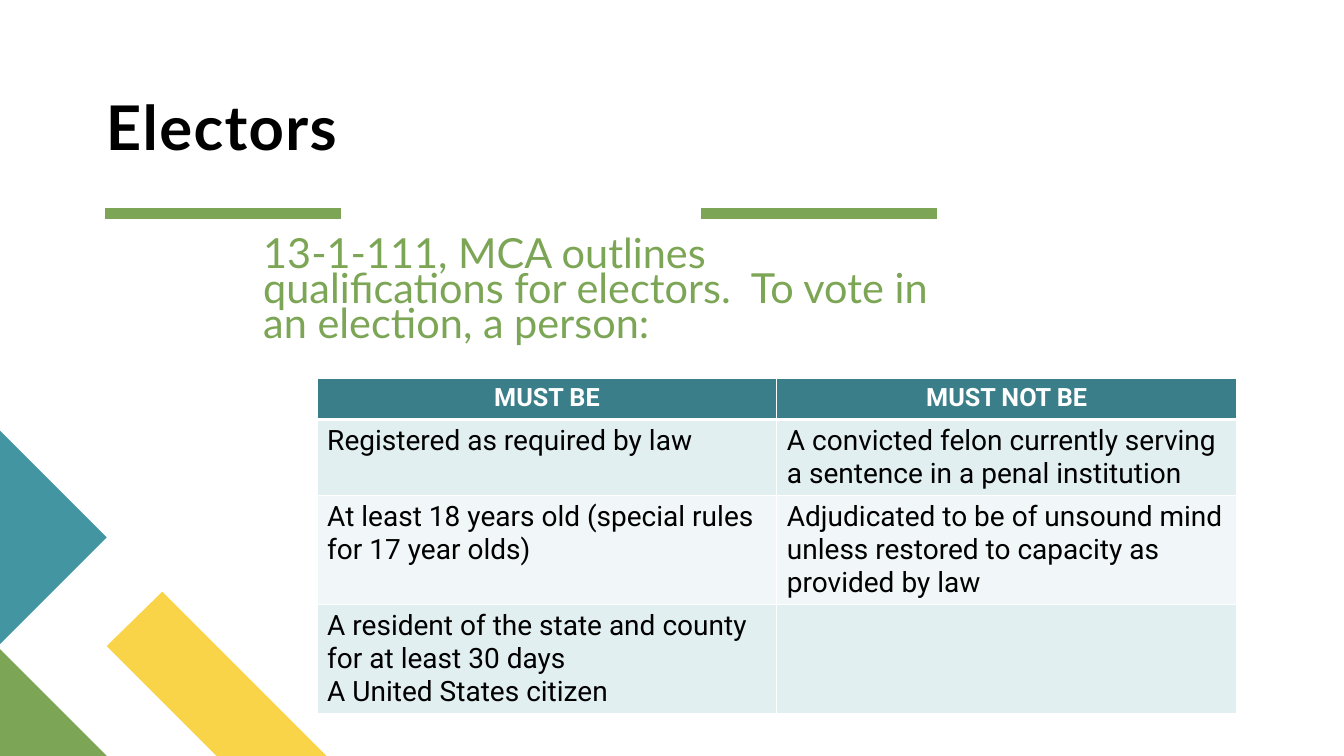
"""Builds the slide on who may be an elector."""
from dataclasses import dataclass

from pptx import Presentation
from pptx import util as u
from pptx.dml.color import RGBColor
from pptx.enum import shapes, text
from pptx.oxml import ns, xmlchemy


@dataclass(frozen=True)
class Theme:
    """Colours, fonts and type sizes."""
    green: str = "7CA655"
    teal: str = "4495A2"
    gold: str = "F9D448"
    head: str = "397E89"
    bands: tuple = ("E2EFF1", "F1F7F8")
    ink: str = "000000"
    white: str = "FFFFFF"
    main: str = "Lato"
    grid: str = "Roboto"
    big: float = 44
    lead: float = 29.6
    label: float = 18
    cell: float = 20


def tint(name):
    """Turn a hex name into a colour."""
    return RGBColor.from_string(name)


def paint(fill, name):
    """Give a fill one solid colour."""
    fill.solid()
    fill.fore_color.rgb = tint(name)


def add(parent, tag, **attrs):
    """Append an XML element with its attributes."""
    node = xmlchemy.OxmlElement(tag)
    for key, val in attrs.items():
        node.set(key, str(val))
    parent.append(node)
    return node


def write(frame, words, font, size, color, bold=False,
          align=text.PP_ALIGN.LEFT, lead=None, before=0, track=0):
    """Fill a text frame, one paragraph to each line of words."""
    frame.text = words
    frame.word_wrap = True
    for para in frame.paragraphs:
        para.alignment = align
        para.space_before = u.Pt(before)
        if lead:
            para.line_spacing = lead
        for item in (para.font, *(run.font for run in para.runs)):
            item.name, item.size, item.bold = font, u.Pt(size), bold
            item.color.rgb = tint(color)
        for run in para.runs:
            if track:
                run.font._element.set("spc", str(track))


class Deck:
    """Holds the theme and the current slide."""

    def __init__(self, theme):
        """Open a wide deck with one title and body slide."""
        self.theme = theme
        self.file = Presentation()
        self.file.slide_width = u.Inches(13.33)
        self.file.slide_height = u.Inches(7.5)
        self.slide = self.file.slides.add_slide(self.file.slide_layouts[1])

    def shape(self, color, points):
        """Draw a filled outline through points."""
        spots = [(u.Cm(x), u.Cm(y)) for x, y in points]
        pen = self.slide.shapes.build_freeform(*spots[0])
        pen.add_line_segments(spots[1:], close=True)
        form = pen.convert_to_shape()
        form.shadow.inherit = False
        paint(form.fill, color)
        form.line.fill.background()

    def rule(self, left, top, width):
        """Draw a thick level line."""
        line = self.slide.shapes.add_connector(
            shapes.MSO_CONNECTOR.STRAIGHT, u.Cm(left), u.Cm(top),
            u.Cm(left + width), u.Cm(top))
        line.line.color.rgb = tint(self.theme.green)
        line.line.width = u.Pt(8)
        add(line._element.spPr, "a:effectLst")

    def place(self, index, words, box, anchor, **style):
        """Move and fill a placeholder."""
        item = self.slide.placeholders[index]
        item.left, item.top, item.width, item.height = map(u.Cm, box)
        frame = item.text_frame
        frame.auto_size = text.MSO_AUTO_SIZE.NONE
        frame.vertical_anchor = anchor
        frame.margin_left = frame.margin_right = 0
        frame.margin_top = frame.margin_bottom = 0
        write(frame, words, self.theme.main, **style)
        for para in frame.paragraphs:
            props = para._p.get_or_add_pPr()
            props.set("marL", "0")
            props.set("indent", "0")
            add(props, "a:buNone")

    def edge(self, cell, widths):
        """Put white borders on a cell, before its fill."""
        props = cell._tc.get_or_add_tcPr()
        for side, width in widths.items():
            line = add(props, f"a:{side}", w=u.Pt(width))
            fill = add(line, "a:solidFill")
            add(fill, "a:srgbClr", val=self.theme.white)

    def table(self, rows, left, top, width, heights):
        """Lay out a header row and tinted rows below it."""
        look = self.theme
        wide = len(rows[0])
        grid = self.slide.shapes.add_table(
            len(rows), wide, u.Cm(left), u.Cm(top),
            u.Cm(width * wide), u.Cm(sum(heights))).table
        grid.horz_banding = False
        for col in grid.columns:
            col.width = u.Cm(width)
        for i, (row, tall) in enumerate(zip(rows, heights)):
            grid.rows[i].height = u.Cm(tall)
            for j, words in enumerate(row):
                cell = grid.cell(i, j)
                top_w, low_w = (3 if i == 1 else 1), (1 if i else 3)
                self.edge(cell, dict(lnL=1, lnR=1, lnT=top_w, lnB=low_w))
                if i:
                    paint(cell.fill, look.bands[(i - 1) % 2])
                    write(cell.text_frame, words, look.grid, look.cell,
                          look.ink)
                else:
                    paint(cell.fill, look.head)
                    write(cell.text_frame, words, look.grid, look.label,
                          look.white, bold=True, align=text.PP_ALIGN.CENTER)


def main():
    """Build the slide and save it."""
    look = Theme()
    deck = Deck(look)
    deck.shape(look.gold, [(8.23, 19.05), (5.46, 19.05), (2.69, 16.28),
                           (4.09, 14.91)])
    deck.shape(look.green, [(2.69, 19.05), (0, 19.05), (0, 16.36)])
    deck.shape(look.teal, [(0, 10.85), (2.69, 13.54), (0, 16.23)])
    for left in (2.65, 17.67):
        deck.rule(left, 5.39, 5.93)
    deck.place(0, "Electors", (2.67, 2.44, 13.72, 1.7),
               text.MSO_ANCHOR.BOTTOM, size=look.big, color=look.ink,
               bold=True, lead=0.9, track=100)
    deck.place(1, "13-1-111, MCA outlines qualifications for electors.  "
               "To vote in an election, a person:", (6.63, 6.07, 17.04, 4.06),
               text.MSO_ANCHOR.TOP, size=look.lead, color=look.green,
               lead=0.7, before=10)
    deck.table([
        ("MUST BE", "MUST NOT BE"),
        ("Registered as required by law",
         "A convicted felon currently serving a sentence in a penal "
         "institution"),
        ("At least 18 years old (special rules for 17 year olds)",
         "Adjudicated to be of unsound mind unless restored to capacity as "
         "provided by law"),
        ("A resident of the state and county for at least 30 days\n"
         "A United States citizen", ""),
    ], 7.99, 9.54, 11.58, (1.03, 1.91, 2.75, 2.75))
    deck.file.save("out.pptx")


if __name__ == "__main__":
    main()
